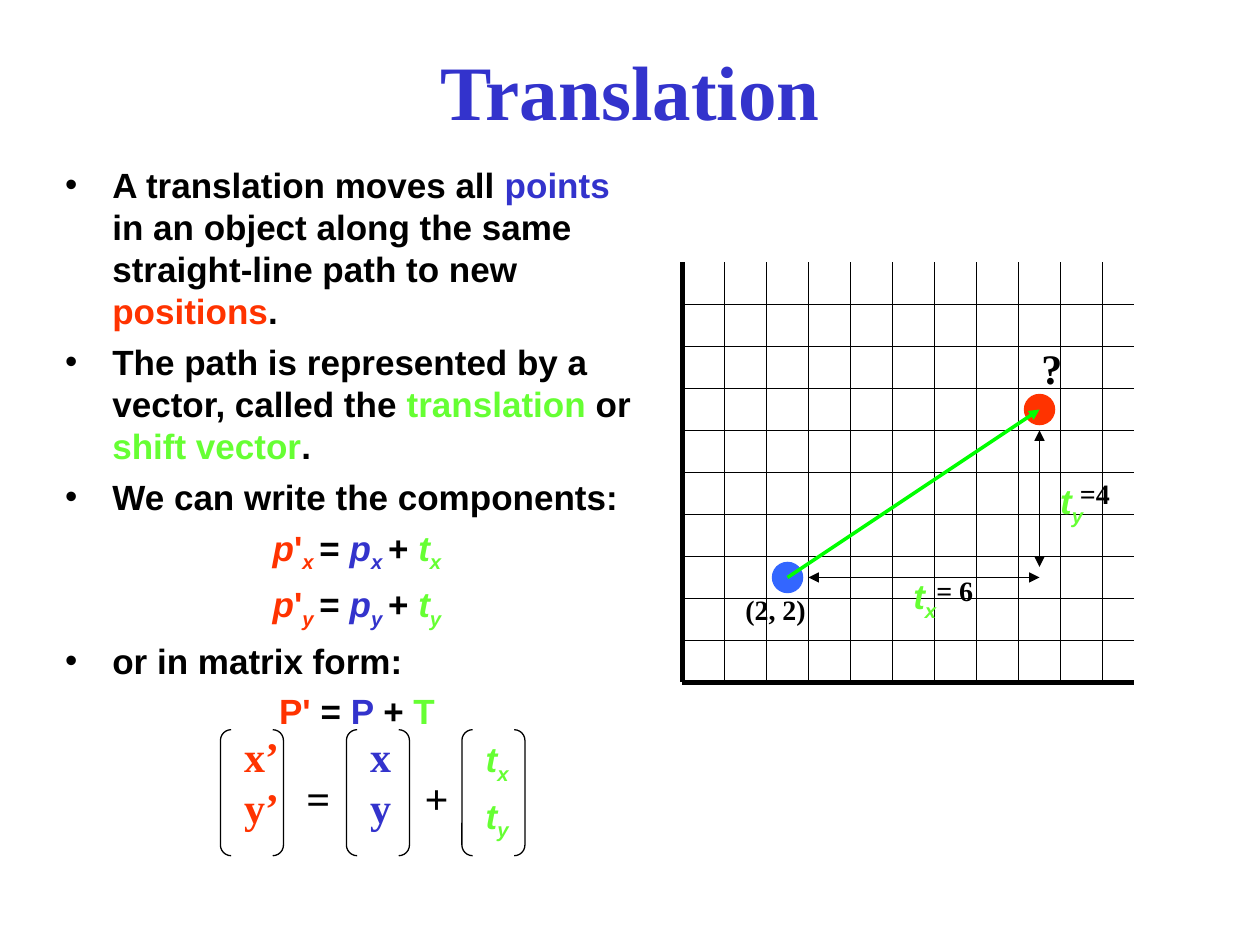
from pptx import Presentation
from pptx.dml.color import RGBColor
from pptx.enum.shapes import MSO_CONNECTOR, MSO_SHAPE
from pptx.enum.text import MSO_ANCHOR, MSO_AUTO_SIZE, PP_ALIGN
from pptx.oxml.ns import qn
from pptx.util import Pt
from lxml import etree

LINE = MSO_CONNECTOR.STRAIGHT
OVAL, BRACKETS = MSO_SHAPE.OVAL, MSO_SHAPE.DOUBLE_BRACKET
TOP, MIDDLE = MSO_ANCHOR.TOP, MSO_ANCHOR.MIDDLE
FIXED = MSO_AUTO_SIZE.NONE
LEFT, CENTER = PP_ALIGN.LEFT, PP_ALIGN.CENTER

BLACK, BLUE, RED, GREEN = "000000", "3333CC", "FF3300", "66FF33"
DOT_BLUE, ARROW_GREEN = "3366FF", "00FF00"
SANS = {"name": "Arial", "size": Pt(20), "bold": True}
TITLE = {"name": "Times New Roman", "size": Pt(44), "bold": True}
SERIF = {**TITLE, "size": Pt(24)}
LABEL = {**TITLE, "size": Pt(16)}


def color(hex_value):
    return RGBColor.from_string(hex_value)


def place(shape, box):
    for name, value in zip(("left", "top", "width", "height"), box):
        setattr(shape, name, Pt(value))


def fill_para(para, spans, font_values):
    """Each span is (text, colour) plus optional marks: i italic, s subscript."""
    for text, hex_value, *marks in spans:
        span = para.add_run()
        span.text = text
        style = "".join(marks)
        for name, value in {**font_values, "italic": "i" in style}.items():
            setattr(span.font, name, value)
        span.font.color.rgb = color(hex_value)
        if "s" in style:
            span.font._element.set("baseline", "-25000")


def set_bullet(para, bulleted):
    props = para._p.get_or_add_pPr()
    props.set("marL", str(Pt(27)))
    props.set("indent", str(-Pt(27)))
    if bulleted:
        bullet_color = etree.SubElement(props, qn("a:buClr"))
        etree.SubElement(bullet_color, qn("a:srgbClr"), val=BLACK)
        etree.SubElement(props, qn("a:buFont"), typeface="Arial")
        etree.SubElement(props, qn("a:buChar"), char="•")
    else:
        etree.SubElement(props, qn("a:buNone"))


def add_text(page, box, lines, font_values, space_before=0):
    frame = page.shapes.add_textbox(*map(Pt, box)).text_frame
    frame.word_wrap = True
    for index, spans in enumerate(lines):
        para = frame.add_paragraph() if index else frame.paragraphs[0]
        para.space_before = Pt(space_before)
        fill_para(para, spans, font_values)


def add_line(page, start, end, hex_value=BLACK, width=0.75, arrows=()):
    line = page.shapes.add_connector(LINE, *map(Pt, (*start, *end)))
    line.line.color.rgb = color(hex_value)
    line.line.width = Pt(width)
    for arrow in arrows:
        etree.SubElement(line.line._get_or_add_ln(), qn(f"a:{arrow}"), type="triangle")
    etree.SubElement(line._element.spPr, qn("a:effectLst"))


def add_title(page, box):
    title = page.shapes.title
    place(title, box)
    frame = title.text_frame
    frame.vertical_anchor, frame.auto_size = MIDDLE, FIXED
    frame.paragraphs[0].alignment = CENTER
    fill_para(frame.paragraphs[0], [("Translation", BLUE)], TITLE)


def indexed(letter, axis, hex_value):
    return [(letter, hex_value, "i"), (axis, hex_value, "is")]


def component_formula(axis):
    return [("p", RED, "i"), ("'", RED), (f"{axis} ", RED, "is"), ("= ", BLACK),
            *indexed("p", f"{axis} ", BLUE), ("+ ", BLACK), *indexed("t", axis, GREEN)]


def add_explanation(page, box):
    items = [
        (True, [("A translation moves all ", BLACK), ("points", BLUE),
                (" in an object along the same straight-line path to new ", BLACK),
                ("positions", RED), (".", BLACK)]),
        (True, [("The path is represented by a vector, called the ", BLACK),
                ("translation", GREEN), (" or ", BLACK),
                ("shift vector", GREEN), (".", BLACK)]),
        (True, [("We can write the components:", BLACK)]),
        (False, component_formula("x")),
        (False, component_formula("y")),
        (True, [("or in matrix form:", BLACK)]),
        (False, [("P' ", RED), ("= ", BLACK), ("P ", BLUE), ("+ ", BLACK), ("T", GREEN)]),
    ]
    body = page.placeholders[1]
    place(body, box)
    frame = body.text_frame
    frame.vertical_anchor, frame.auto_size = TOP, FIXED
    for index, (bulleted, spans) in enumerate(items):
        para = frame.add_paragraph() if index else frame.paragraphs[0]
        para.alignment = LEFT if bulleted else CENTER
        para.space_before = Pt(5)
        set_bullet(para, bulleted)
        fill_para(para, spans, SANS)


def add_dot(page, center, hex_value, size=18):
    x, y = center
    dot = page.shapes.add_shape(OVAL, *map(Pt, (x - size / 2, y - size / 2, size, size)))
    dot.shadow.inherit = False
    dot.fill.solid()
    dot.fill.fore_color.rgb = color(hex_value)
    dot.line.fill.background()


def add_graph(page, box, cell=24):
    left, top, width, height = box
    right, bottom = left + width, top + height

    def point(column, row):
        return left + column * cell, bottom - row * cell

    def label(column, row, size, spans, font_values):
        add_text(page, (*point(column, row), *size), [spans], font_values)

    for column in range(int(width // cell) + 1):
        x = left + column * cell
        add_line(page, (x, top), (x, bottom), width=0.75 if column else 3)
    for row in range(int(height // cell)):
        y = bottom - row * cell
        add_line(page, (left, y), (right, y), width=0.75 if row else 3)

    start, end = point(2.5, 2.5), point(8.5, 6.5)
    add_dot(page, start, DOT_BLUE)
    add_dot(page, end, RED)
    add_line(page, start, end, ARROW_GREEN, 2, ["tailEnd"])
    both = ["headEnd", "tailEnd"]
    add_line(page, point(3, 2.5), point(8.5, 2.5), arrows=both)
    add_line(page, point(8.5, 2.75), point(8.5, 6), arrows=both)

    label(5.2, 2.71, (36, 35), indexed("t", "x", GREEN), SANS)
    label(8.7, 4.97, (36, 35), indexed("t", "y", GREEN), SANS)
    label(1.2, 2.3, (54, 27), [("(2, 2)", BLACK)], LABEL)
    label(5.75, 2.75, (42, 27), [("= 6", BLACK)], LABEL)
    label(9.17, 5.06, (42, 27), [("=4", BLACK)], LABEL)
    label(8.25, 8.25, (30, 36), [("?", BLACK)], SERIF)


def add_column_vector(page, box, lines, font_values, text_top, space_before=0):
    left, top, width, height = box
    brackets = page.shapes.add_shape(BRACKETS, *map(Pt, box))
    brackets.adjustments[0] = 0.17
    brackets.shadow.inherit = False
    brackets.fill.background()
    brackets.line.color.rgb = color(BLACK)
    brackets.line.width = Pt(0.75)
    add_text(page, (left + 6.5, text_top, width + 6, height - 6), lines,
             font_values, space_before)


def add_matrix_equation(page, box):
    left, top, width, height = box
    for offset, lines, font_values, lift, gap in (
            (0, [[("x’", RED)], [("y’", RED)]], SERIF, 3, 0),
            (72, [[("x", BLUE)], [("y", BLUE)]], SERIF, 3, 0),
            (138, [indexed("t", axis, GREEN) for axis in "xy"], SANS, -1, 5)):
        add_column_vector(page, (left + offset, top, 36, height), lines,
                          font_values, top - lift, gap)
    for offset, sign in ((42, "="), (109.5, "+")):
        add_text(page, (left + offset, top + 21, 32, 36), [[(sign, BLACK)]], SERIF)


def main():
    deck = Presentation()
    deck.slide_width, deck.slide_height = Pt(720), Pt(540)
    page = deck.slides.add_slide(deck.slide_layouts[1])
    add_title(page, (54, 6, 612, 90))
    add_explanation(page, (30, 90, 348, 390))
    add_graph(page, (390, 150, 258, 240))
    add_matrix_equation(page, (126, 417, 174, 72))
    deck.save("out.pptx")


if __name__ == "__main__":
    main()
